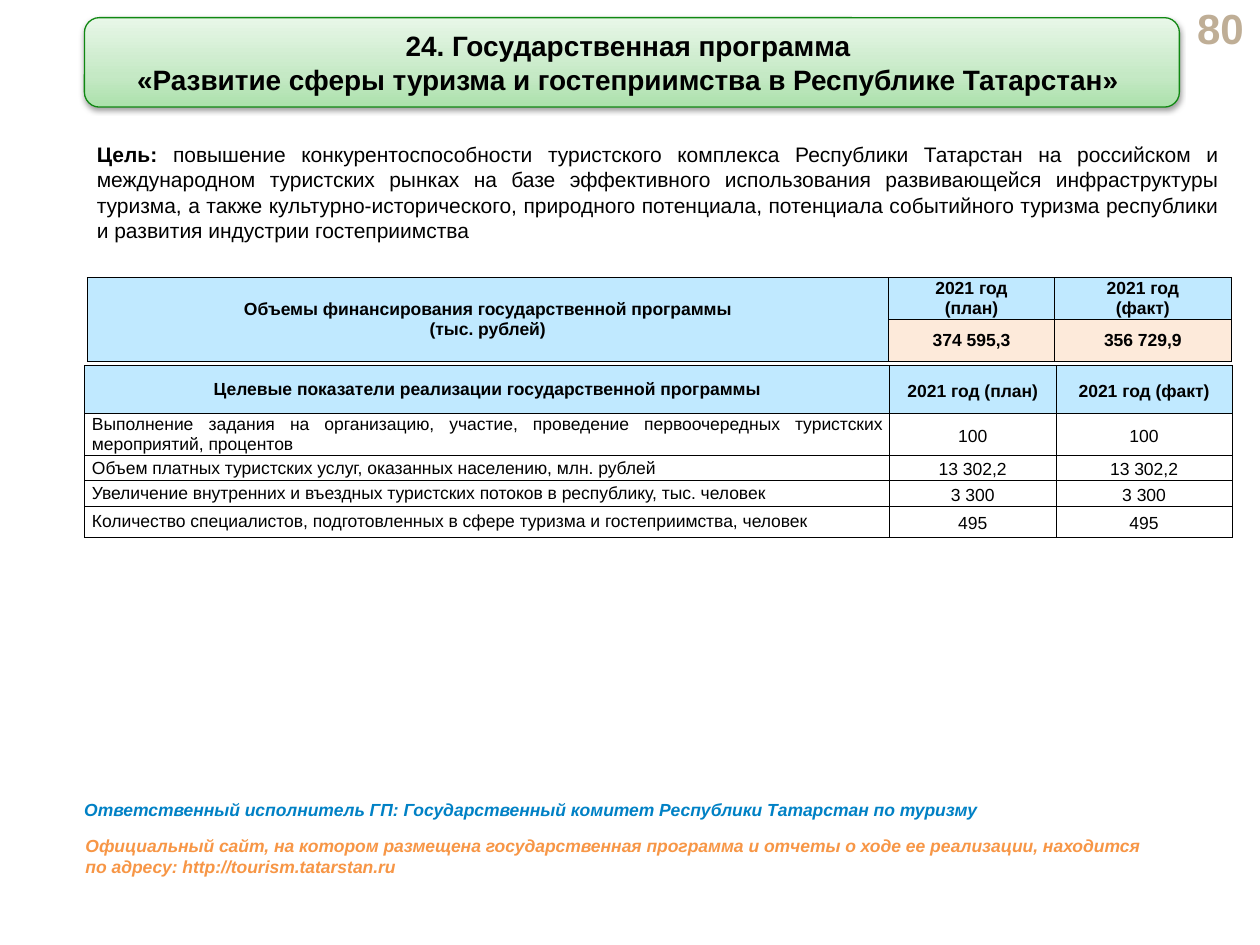
from copy import deepcopy

from lxml.etree import SubElement
from pptx import Presentation
from pptx.dml.color import RGBColor
from pptx.enum.shapes import MSO_SHAPE as Shape
from pptx.enum.text import MSO_ANCHOR as Anchor, PP_ALIGN as Align
from pptx.oxml import parse_xml
from pptx.oxml.ns import nsdecls, qn
from pptx.util import Inches, Pt

BLACK, BLUE, PEACH = "000000", "C0E9FF", "FDEADA"
PLAN, FACT = "2021 год (план)", "2021 год (факт)"
GOALS = [
    ("Целевые показатели реализации государственной программы", PLAN, FACT),
    ("Выполнение задания на организацию, участие, проведение первоочередных "
     "туристских мероприятий, процентов", "100", "100"),
    ("Объем платных туристских услуг, оказанных населению, млн. рублей",
     "13 302,2", "13 302,2"),
    ("Увеличение внутренних и въездных туристских потоков в республику, "
     "тыс. человек", "3 300", "3 300"),
    ("Количество специалистов, подготовленных в сфере туризма и "
     "гостеприимства, человек", "495", "495"),
]


def color(code):
    return RGBColor.from_string(code)


def style(frame, size, code=BLACK, bold=True, italic=False,
          align=Align.LEFT, space=None):
    for par in frame.paragraphs:
        par.alignment = align
        par.line_spacing = space
        for run in par.runs:
            font = run.font
            font.name, font.size = "Arial", Pt(size)
            font.bold, font.italic = bold, italic
            font.color.rgb = color(code)


def add_text(slide, box, text, size, anchor=Anchor.TOP, **look):
    frame = slide.shapes.add_textbox(*map(Inches, box)).text_frame
    frame.word_wrap = True
    frame.vertical_anchor = anchor
    frame.text = text
    style(frame, size, **look)
    return frame


def add_title(slide, box, text):
    shape = slide.shapes.add_shape(Shape.ROUNDED_RECTANGLE, *map(Inches, box))
    shape.line.color.rgb = color("108812")
    shape.line.width = Pt(0.75)
    fill = shape.fill
    fill.gradient()
    fill.gradient_angle = 90
    stops = shape._element.spPr.find(qn("a:gradFill")).find(qn("a:gsLst"))
    stops.insert(1, deepcopy(stops[0]))
    shades = [(0, "ABE1AB"), (0.35, "C5E9C5"), (1, "E8F7E8")]
    for stop, (pos, code) in zip(fill.gradient_stops, shades):
        stop.position = pos
        stop.color.rgb = color(code)
    shape._element.spPr.append(parse_xml(
        f'<a:effectLst {nsdecls("a")}><a:outerShdw blurRad="{Pt(3.1)}" '
        f'dist="{Pt(1.6)}" dir="5400000" rotWithShape="0">'
        f'<a:srgbClr val="{BLACK}"><a:alpha val="38000"/></a:srgbClr>'
        '</a:outerShdw></a:effectLst>'))
    shape.text_frame.word_wrap = True
    shape.text_frame.text = text
    style(shape.text_frame, 16, align=Align.CENTER)


def add_edges(cell):
    props = cell._tc.get_or_add_tcPr()
    for side in "LRTB":
        line = SubElement(props, qn(f"a:ln{side}"), w=str(Pt(0.25)))
        SubElement(SubElement(line, qn("a:solidFill")),
                   qn("a:srgbClr"), val=BLACK)


def fill_cell(cell, text, back=None, **look):
    cell.margin_left = cell.margin_right = Inches(0.06)
    cell.margin_top = cell.margin_bottom = 0
    cell.vertical_anchor = Anchor.MIDDLE
    if back:
        cell.fill.solid()
        cell.fill.fore_color.rgb = color(back)
    else:
        cell.fill.background()
    cell.text_frame.text = text
    style(cell.text_frame, 10, **look)


def add_grid(slide, left, top, cols, rows):
    grid = slide.shapes.add_table(
        len(rows), len(cols), Inches(left), Inches(top),
        Inches(sum(cols)), Inches(sum(rows))).table
    grid.first_row = grid.horz_banding = False
    for col, width in zip(grid.columns, cols):
        col.width = Inches(width)
    for row, height in zip(grid.rows, rows):
        row.height = Inches(height)
    for cell in grid.iter_cells():
        add_edges(cell)
    return grid


def add_funds(slide):
    grid = add_grid(slide, 0.69, 2.2, [6.36, 1.32, 1.4], [0.33, 0.33])
    grid.cell(0, 0).merge(grid.cell(1, 0))
    fill_cell(grid.cell(0, 0), "Объемы финансирования государственной "
              "программы\n(тыс. рублей)", BLUE, align=Align.CENTER)
    sums = [(PLAN, "374 595,3"), (FACT, "356 729,9")]
    for col, (head, value) in enumerate(sums, 1):
        fill_cell(grid.cell(0, col), head.replace(" (", "\n("), BLUE,
                  align=Align.CENTER)
        fill_cell(grid.cell(1, col), value, PEACH, align=Align.CENTER)


def add_goals(slide):
    grid = add_grid(slide, 0.67, 2.9, [6.39, 1.32, 1.4],
                    [0.38, 0.33, 0.2, 0.2, 0.25])
    for r, row in enumerate(GOALS):
        head = r == 0
        for c, text in enumerate(row):
            left = c == 0 and not head
            fill_cell(grid.cell(r, c), text, BLUE if head else None, bold=head,
                      align=Align.JUSTIFY if left else Align.CENTER,
                      space=1.2 if c else None)


def add_aim(slide):
    frame = add_text(slide, (0.67, 1.07, 9.11, 0.91), "Цель: ", 12,
                     Anchor.MIDDLE)
    frame.paragraphs[0].add_run().text = (
        "повышение конкурентоспособности туристского комплекса Республики "
        "Татарстан на российском и международном туристских рынках на базе "
        "эффективного использования развивающейся инфраструктуры туризма, "
        "а также культурно-исторического, природного потенциала, потенциала "
        "событийного туризма республики и развития индустрии гостеприимства")
    style(frame, 12, align=Align.JUSTIFY)
    frame.paragraphs[0].runs[1].font.bold = False


def main():
    prs = Presentation()
    prs.slide_width, prs.slide_height = Inches(10), Inches(7.5)
    slide = prs.slides.add_slide(prs.slide_layouts[6])
    add_text(slide, (9.33, 0.05, 0.64, 0.34), "80", 24, Anchor.MIDDLE,
             code="BFAE96", align=Align.RIGHT)
    add_funds(slide)
    add_goals(slide)
    add_aim(slide)
    add_title(slide, (0.67, 0.14, 8.69, 0.71),
              "24. Государственная программа \v«Развитие сферы туризма и "
              "гостеприимства в Республике Татарстан» ")
    add_text(slide, (0.57, 6.29, 9.55, 0.27),
             "Ответственный исполнитель ГП: Государственный комитет "
             "Республики Татарстан по туризму", 10, code="0081C5", italic=True)
    add_text(slide, (0.58, 6.58, 8.59, 0.43),
             "Официальный сайт, на котором размещена государственная программа "
             "и отчеты о ходе ее реализации, находится по адресу: "
             "http://tourism.tatarstan.ru", 10, code="F79646", italic=True)
    prs.save("out.pptx")


if __name__ == "__main__":
    main()
